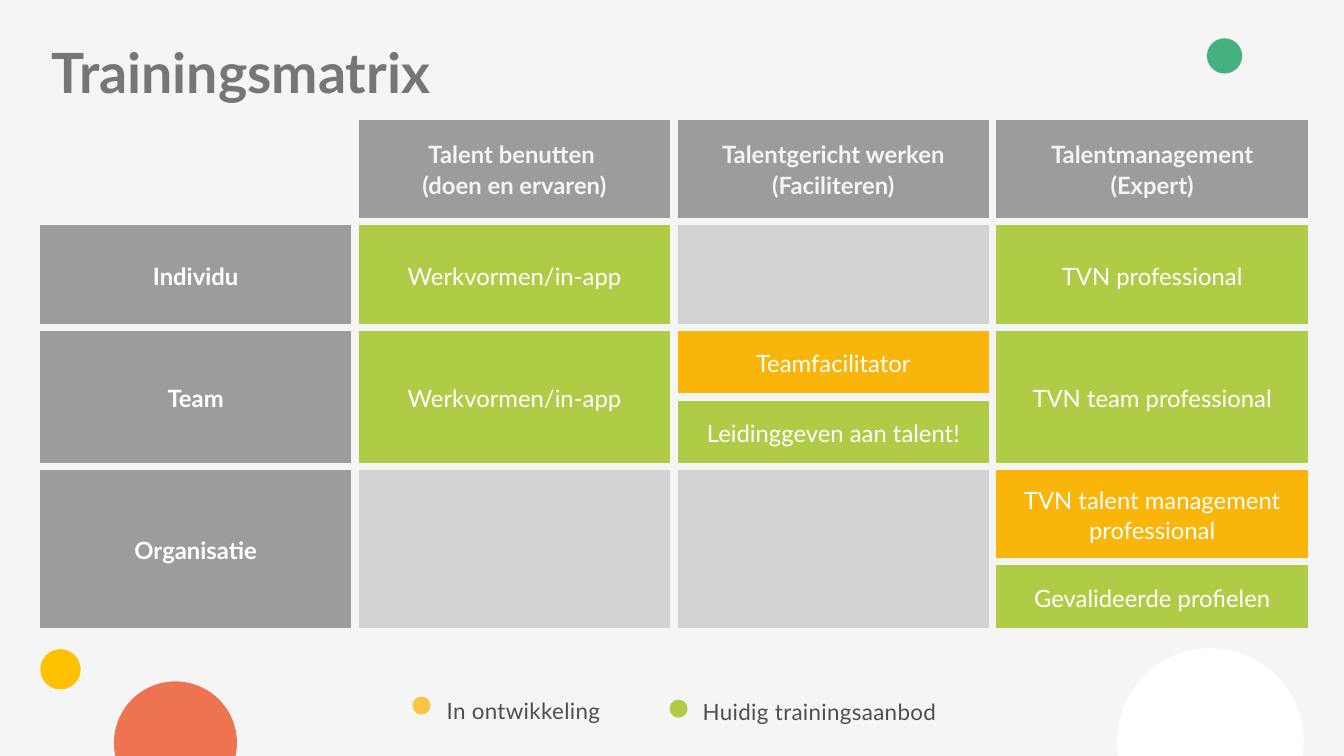
"""Build the Trainingsmatrix slide: a training table with a legend and decorative circles."""
import pptx
import pptx.dml.color
import pptx.enum.shapes
import pptx.enum.text
import pptx.oxml
import pptx.oxml.ns
import pptx.util
from pptx.util import Inches, Pt

FONT = "Lato"
SLIDE_WIDTH, SLIDE_HEIGHT = 13.33, 7.5
BACKGROUND, WHITE = "F5F5F5", "FFFFFF"
HEADER, EMPTY, CURRENT, DEVELOPING = "9C9C9C", "D3D3D3", "AFCC46", "FAB50B"

TITLE = "Trainingsmatrix"
TABLE_WIDTH, COLUMNS = 12.65, 4
ROW_HEIGHTS = [1.05, 1.05, 0.69, 0.69, 0.94, 0.7]
# row, column, row span, fill, text
CELLS = [
    (0, 0, 1, BACKGROUND, ""),
    (0, 1, 1, HEADER, "Talent benutten \n(doen en ervaren)"),
    (0, 2, 1, HEADER, "Talentgericht werken\n(Faciliteren)"),
    (0, 3, 1, HEADER, "Talentmanagement\n(Expert)"),
    (1, 0, 1, HEADER, "Individu"),
    (1, 1, 1, CURRENT, "Werkvormen/in-app"),
    (1, 2, 1, EMPTY, ""),
    (1, 3, 1, CURRENT, "TVN professional"),
    (2, 0, 2, HEADER, "Team"),
    (2, 1, 2, CURRENT, "Werkvormen/in-app"),
    (2, 2, 1, DEVELOPING, "Teamfacilitator"),
    (2, 3, 2, CURRENT, "TVN team professional"),
    (3, 2, 1, CURRENT, "Leidinggeven aan talent!"),
    (4, 0, 2, HEADER, "Organisatie"),
    (4, 1, 2, EMPTY, ""),
    (4, 2, 2, EMPTY, ""),
    (4, 3, 1, DEVELOPING, "TVN talent management professional"),
    (5, 3, 1, CURRENT, "Gevalideerde profielen"),
]
# dot left, dot top, text left, text top, text width, fill, opacity in percent, text
LEGEND = [
    (4.09, 6.91, 4.43, 6.85, 1.67, DEVELOPING, 75, "In ontwikkeling"),
    (6.64, 6.94, 6.97, 6.86, 3.57, CURRENT, 100, "Huidig trainingsaanbod"),
]
LEGEND_DOT = 0.18
# left, top, diameter, fill
CIRCLES = [
    (11.08, 6.43, 1.85, WHITE),
    (0.4, 6.44, 0.4, "FFC000"),
    (11.97, 0.38, 0.35, "44B17F"),
    (1.13, 6.76, 1.22, "EE7351"),
]


def color(value):
    return pptx.dml.color.RGBColor.from_string(value)


def add_circle(slide, left, top, diameter, fill):
    circle = slide.shapes.add_shape(
        pptx.enum.shapes.MSO_SHAPE.OVAL, Inches(left), Inches(top), Inches(diameter), Inches(diameter))
    circle.shadow.inherit = False
    circle.fill.solid()
    circle.fill.fore_color.rgb = color(fill)
    circle.line.fill.background()
    return circle


def style_font(font, size, fill, bold=False):
    font.name = FONT
    font.size = Pt(size)
    font.bold = bold
    font.color.rgb = color(fill)


def add_borders(cell):
    properties = cell._tc.get_or_add_tcPr()
    for index, side in enumerate(("lnL", "lnR", "lnT", "lnB")):
        properties.insert(index, pptx.oxml.parse_xml(
            f'<a:{side} {pptx.oxml.ns.nsdecls("a")} w="{Pt(6)}"><a:solidFill>'
            f'<a:srgbClr val="{BACKGROUND}"/></a:solidFill></a:{side}>'))


def fill_cell(cell, row, fill, text):
    cell.vertical_anchor = pptx.enum.text.MSO_ANCHOR.MIDDLE
    cell.margin_left = cell.margin_right = cell.margin_top = cell.margin_bottom = Inches(0.15)
    cell.fill.solid()
    cell.fill.fore_color.rgb = color(fill)
    if not text:
        return
    cell.text_frame.text = text
    for paragraph in cell.text_frame.paragraphs:
        paragraph.alignment = pptx.enum.text.PP_ALIGN.CENTER
        paragraph.line_spacing = Pt(22.1)
        style_font(paragraph.font, 17, BACKGROUND if row == 0 else WHITE, fill == HEADER)


def add_matrix(slide):
    table = slide.shapes.add_table(
        len(ROW_HEIGHTS), COLUMNS, Inches(0.36), Inches(1.15),
        Inches(TABLE_WIDTH), Inches(sum(ROW_HEIGHTS))).table
    table.first_row = table.horz_banding = False
    for column in table.columns:
        column.width = Inches(TABLE_WIDTH / COLUMNS)
    for row, height in zip(table.rows, ROW_HEIGHTS):
        row.height = Inches(height)
    for cell in table.iter_cells():
        add_borders(cell)
    for row, column, span, fill, text in CELLS:
        cell = table.cell(row, column)
        if span > 1:
            cell.merge(table.cell(row + span - 1, column))
        fill_cell(cell, row, fill, text)


def add_legend(slide):
    for dot_left, dot_top, left, top, width, fill, opacity, text in LEGEND:
        box = slide.shapes.add_textbox(Inches(left), Inches(top), Inches(width), Inches(0.31))
        frame = box.text_frame
        frame.word_wrap = True
        frame.margin_left = frame.margin_right = frame.margin_top = frame.margin_bottom = 0
        frame.text = text
        paragraph = frame.paragraphs[0]
        paragraph.line_spacing = Pt(24)
        style_font(paragraph.font, 16, "4E4E4E")
        paragraph.runs[0]._r.get_or_add_rPr().set("spc", "25")
        dot = add_circle(slide, dot_left, dot_top, LEGEND_DOT, fill)
        if opacity < 100:
            shade = dot._element.spPr.find(".//" + pptx.oxml.ns.qn("a:srgbClr"))
            shade.append(pptx.oxml.parse_xml(
                f'<a:alpha {pptx.oxml.ns.nsdecls("a")} val="{opacity * 1000}"/>'))


def add_title(slide):
    title = slide.shapes.title
    title.left, title.top, title.width, title.height = map(Inches, (0.41, 0.4, 12.52, 0.69))
    frame = title.text_frame
    frame.text = TITLE
    frame.vertical_anchor = pptx.enum.text.MSO_ANCHOR.MIDDLE
    frame.auto_size = pptx.enum.text.MSO_AUTO_SIZE.NONE
    paragraph = frame.paragraphs[0]
    paragraph.alignment = pptx.enum.text.PP_ALIGN.LEFT
    paragraph.line_spacing = 0.9
    style_font(paragraph.font, 39.6, "767676", True)


def main():
    presentation = pptx.Presentation()
    presentation.slide_width = Inches(SLIDE_WIDTH)
    presentation.slide_height = Inches(SLIDE_HEIGHT)
    slide = presentation.slides.add_slide(presentation.slide_layouts[5])
    slide.background.fill.solid()
    slide.background.fill.fore_color.rgb = color(BACKGROUND)
    for circle in CIRCLES:
        add_circle(slide, *circle)
    add_matrix(slide)
    add_legend(slide)
    add_title(slide)
    presentation.save("out.pptx")


if __name__ == "__main__":
    main()
